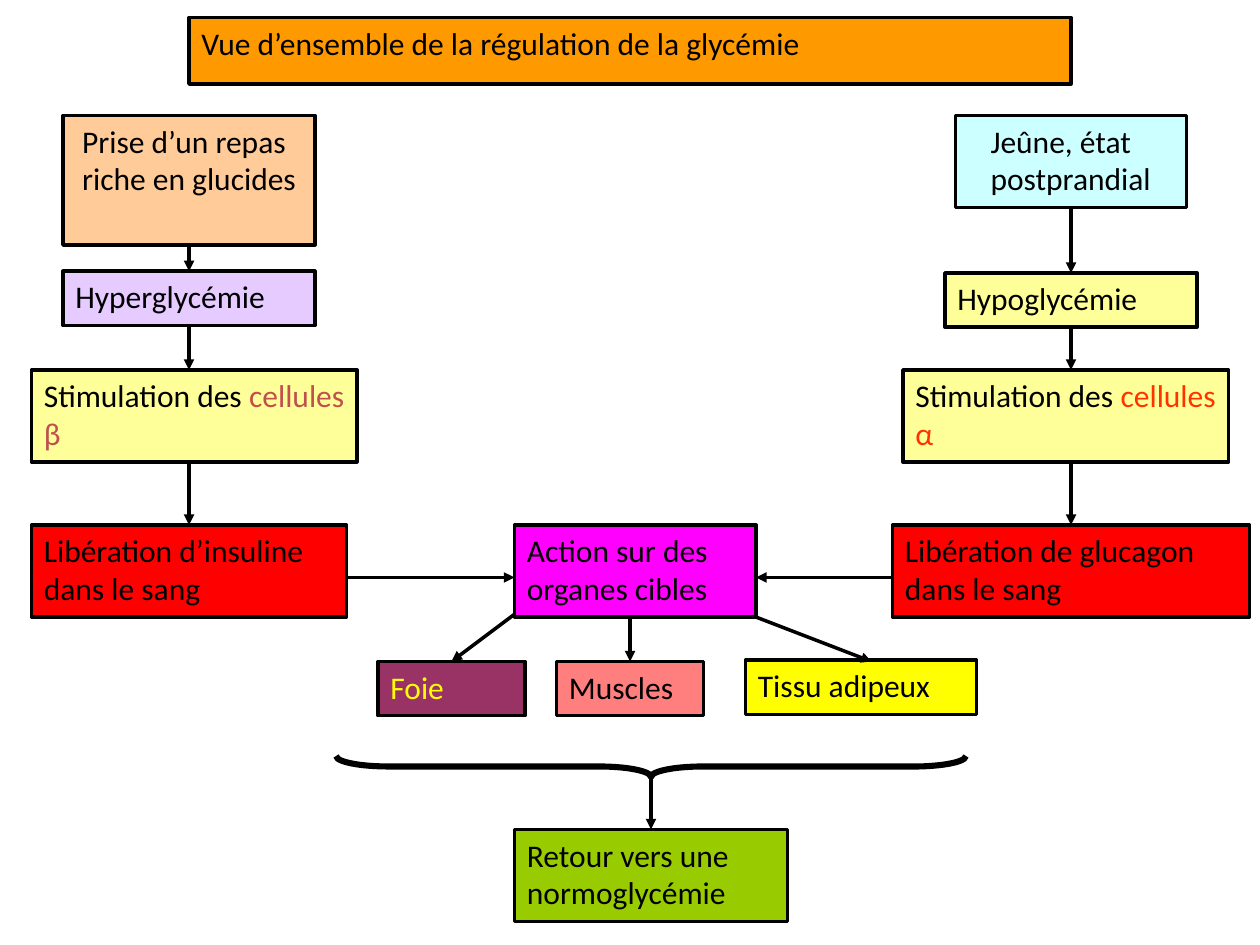
from collections import namedtuple

from pptx import Presentation
from pptx.dml.color import RGBColor
from pptx.enum.shapes import MSO_CONNECTOR, MSO_SHAPE
from pptx.enum.text import MSO_ANCHOR, PP_ALIGN
from pptx.oxml.ns import qn
from pptx.util import Pt
from lxml.etree import SubElement

BLACK = RGBColor(0x00, 0x00, 0x00)
ORANGE = RGBColor(0xFF, 0x99, 0x00)
PEACH = RGBColor(0xFF, 0xCC, 0x99)
PURPLE = RGBColor(0xCC, 0x99, 0xFF)
PALE_YELLOW = RGBColor(0xFF, 0xFF, 0x99)
PALE_CYAN = RGBColor(0xCC, 0xFF, 0xFF)
RED = RGBColor(0xFF, 0x00, 0x00)
MAGENTA = RGBColor(0xFF, 0x00, 0xFF)
PLUM = RGBColor(0x99, 0x33, 0x66)
YELLOW = RGBColor(0xFF, 0xFF, 0x00)
GREEN = RGBColor(0x99, 0xCC, 0x00)
BETA_RED = RGBColor(0xC0, 0x50, 0x4D)
ALPHA_RED = RGBColor(0xFF, 0x33, 0x00)

TOP = 0
BOTTOM = 2
ONE_LINE = 31
TWO_LINES = 52.6

Box = namedtuple("Box", "left top width height")
# A step is centred on its column's axis, moved sideways by shift
Step = namedtuple("Step", "top width height shift fill runs alpha padding",
                  defaults=(None, 7.2))


def add_label(slide, box, fill, runs, alpha=None, padding=7.2):
    """Outlined rectangle; runs is a list of (text, colour)."""
    shape = slide.shapes.add_shape(MSO_SHAPE.RECTANGLE, *map(Pt, box))
    shape.shadow.inherit = False
    shape.fill.solid()
    shape.fill.fore_color.rgb = fill
    if alpha is not None:
        color = shape._element.spPr.find(qn("a:solidFill"))[0]
        SubElement(color, qn("a:alpha")).set("val", str(alpha * 1000))
    shape.line.color.rgb = BLACK
    shape.line.width = Pt(2)

    frame = shape.text_frame
    frame.word_wrap = True
    frame.vertical_anchor = MSO_ANCHOR.TOP
    frame.margin_left, frame.margin_right = Pt(padding), Pt(7.2)
    frame.margin_top = frame.margin_bottom = Pt(3.6)
    paragraph = frame.paragraphs[0]
    paragraph.alignment = PP_ALIGN.LEFT
    for text, color in runs:
        run = paragraph.add_run()
        run.text = text
        run.font.name = "Calibri"
        run.font.size = Pt(18)
        run.font.color.rgb = color
    return shape


def add_arrow(slide, start, end, source=None, target=None):
    """Arrow, joined to the source's bottom and the target's top if given."""
    connector = slide.shapes.add_connector(
        MSO_CONNECTOR.STRAIGHT, *map(Pt, (*start, *end)))
    if source is not None:
        connector.begin_connect(source, BOTTOM)
    if target is not None:
        connector.end_connect(target, TOP)
    connector.line.color.rgb = BLACK
    connector.line.width = Pt(2)
    line = connector.line._get_or_add_ln()
    SubElement(line, qn("a:tailEnd")).set("type", "triangle")
    SubElement(connector._element.spPr, qn("a:effectLst"))


def add_title(slide, box):
    add_label(slide, box, ORANGE,
              [("Vue d’ensemble de la régulation de la glycémie", BLACK)])


def add_column(slide, box, steps):
    """Chain of steps from top to bottom, linked along the column's axis."""
    axis = box.left + box.width / 2
    previous = previous_shape = None
    for step in steps:
        top = box.top + step.top
        label_box = Box(axis - step.width / 2 + step.shift, top,
                        step.width, step.height)
        shape = add_label(slide, label_box, step.fill, step.runs,
                          step.alpha, step.padding)
        if previous:
            start = box.top + previous.top + previous.height
            add_arrow(slide, (axis, start), (axis, top),
                      None if previous.shift else previous_shape,
                      None if step.shift else shape)
        previous, previous_shape = step, shape


def add_targets(slide, box):
    """Action box with its three target organs below."""
    left, top, width, height = box
    organ_top = top + height - ONE_LINE
    organs = [
        add_label(slide, Box(left + x, organ_top + y, organ_width, ONE_LINE),
                  fill, [(text, color)], alpha)
        for x, y, organ_width, fill, text, color, alpha in (
            (0, 0, 84, PLUM, "Foie", YELLOW, None),
            (102, 0, 84, RED, "Muscles", BLACK, 50),
            (210, -0.7, 132, YELLOW, "Tissu adipeux", BLACK, None),
        )
    ]
    liver, muscles, _ = organs
    add_arrow(slide, (left + 90, top + 42), (left + 42, organ_top),
              target=liver)
    add_arrow(slide, (left + 144, top + 48), (left + 144, organ_top),
              target=muscles)
    add_arrow(slide, (left + 204, top + 48), (left + 282, organ_top))
    add_label(slide, Box(left + 78, top, 138, TWO_LINES), MAGENTA,
              [("Action sur des organes cibles", BLACK)])


def add_outcome(slide, box):
    """Horizontal brace pointing down to the result."""
    left, top, width, height = box
    middle = left + width / 2
    depth = 12
    # The right brace stands upright about its centre, then turns a quarter
    brace = slide.shapes.add_shape(
        MSO_SHAPE.RIGHT_BRACE, Pt(middle - depth / 2),
        Pt(top + depth / 2 - width / 2), Pt(depth), Pt(width))
    brace.rotation = 90
    brace.adjustments[0] = 2.5
    brace.adjustments[1] = 0.5
    brace.shadow.inherit = False
    brace.fill.background()
    brace.line.color.rgb = BLACK
    brace.line.width = Pt(3.5)

    result_top = top + height - TWO_LINES
    result = add_label(slide, Box(middle - 78, result_top, 156, TWO_LINES),
                       GREEN, [("Retour vers une normoglycémie", BLACK)])
    add_arrow(slide, (middle, top + depth), (middle, result_top),
              target=result)


def main():
    presentation = Presentation()
    presentation.slide_width, presentation.slide_height = Pt(720), Pt(540)
    slide = presentation.slides.add_slide(presentation.slide_layouts[6])

    add_title(slide, Box(108, 10, 504, 38))

    # Response to high blood sugar
    add_column(slide, Box(18, 66, 180, 286.6), [
        Step(0, 144, 74, 0, PEACH,
             [("Prise d’un repas riche en glucides", BLACK)], padding=11),
        Step(89, 144, ONE_LINE, 0, PURPLE, [("Hyperglycémie", BLACK)], 50),
        Step(145.4, 186, TWO_LINES, 3, PALE_YELLOW,
             [("Stimulation des ", BLACK), ("cellules β", BETA_RED)]),
        Step(234, 180, TWO_LINES, 0, RED,
             [("Libération d’insuline dans le sang", BLACK)]),
    ])

    # Response to low blood sugar
    add_column(slide, Box(510, 66, 204, 286.6), [
        Step(0, 132, TWO_LINES, 0, PALE_CYAN,
             [("Jeûne, état postprandial", BLACK)], padding=20),
        Step(90, 144, ONE_LINE, 0, PALE_YELLOW, [("Hypoglycémie", BLACK)]),
        Step(145.4, 186, TWO_LINES, -3, PALE_YELLOW,
             [("Stimulation des ", BLACK), ("cellules α", ALPHA_RED)]),
        Step(234, 204, TWO_LINES, 0, RED,
             [("Libération de glucagon dans le sang", BLACK)]),
    ])

    # Both hormones act on the target organs
    add_targets(slide, Box(216, 300, 342, 109))
    add_arrow(slide, (198, 330), (294, 330))
    add_arrow(slide, (510, 330), (432, 330))

    add_outcome(slide, Box(192, 432, 360, 94.6))
    presentation.save("out.pptx")


if __name__ == "__main__":
    main()
